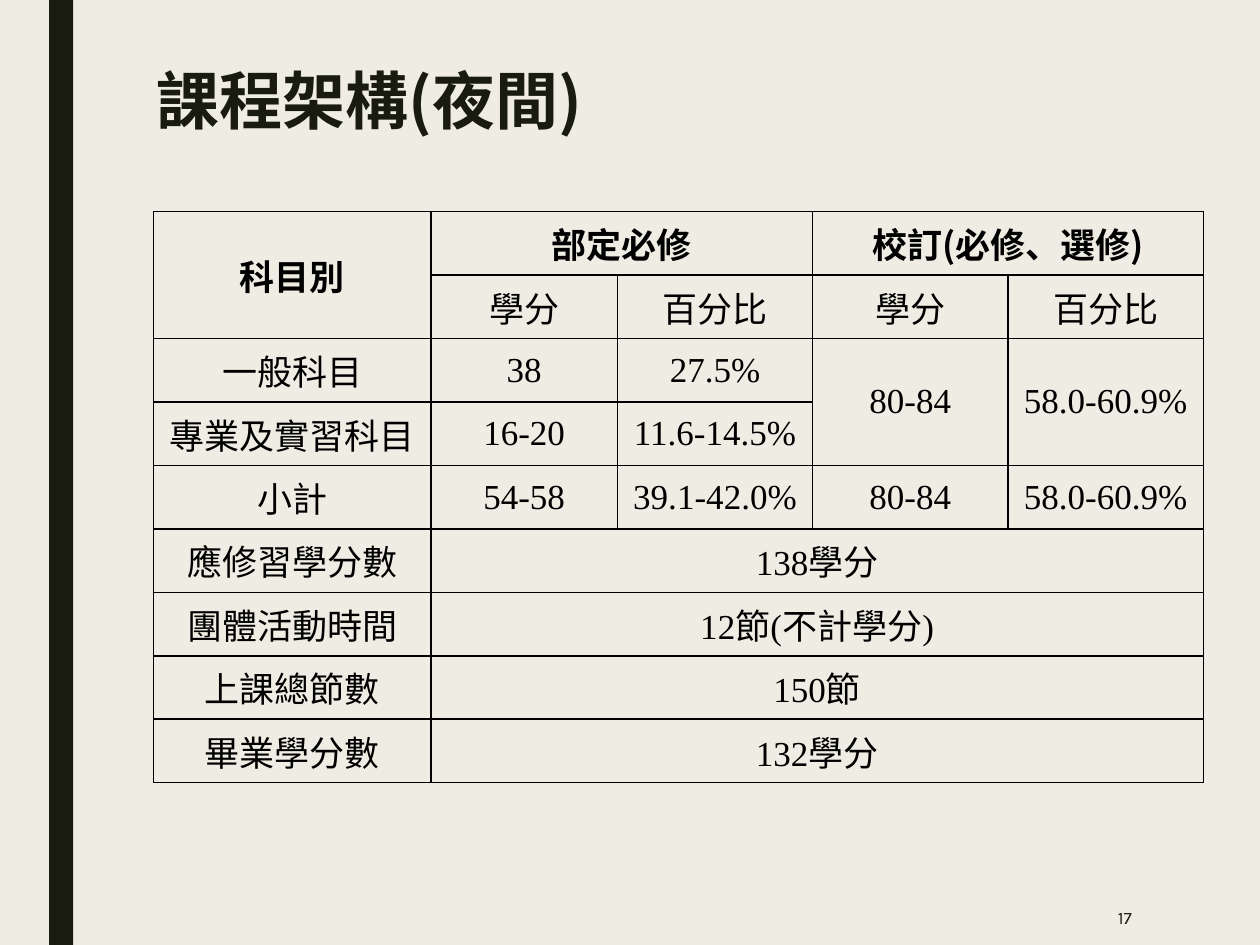
from lxml import etree
from pptx import Presentation
from pptx.dml.color import RGBColor
from pptx.enum.shapes import MSO_SHAPE
from pptx.enum.text import MSO_ANCHOR, PP_ALIGN
from pptx.oxml.ns import qn
from pptx.util import Inches, Pt

RECT = MSO_SHAPE.RECTANGLE
MIDDLE = MSO_ANCHOR.MIDDLE
LEFT, CENTER, RIGHT = PP_ALIGN.LEFT, PP_ALIGN.CENTER, PP_ALIGN.RIGHT

CJK, SERIF, SANS = "Noto Sans CJK SC", "Times New Roman", "Karla"
DARK, BLACK, PAPER = "191B0E", "000000", "EFEDE3"

TITLE = "課程架構(夜間)"
PAGE = "17"
ROWS = [
    ["科目別", "部定必修", None, "校訂(必修、選修)", None],
    [None, "學分", "百分比", "學分", "百分比"],
    ["一般科目", "38", "27.5%", "80-84", "58.0-60.9%"],
    ["專業及實習科目", "16-20", "11.6-14.5%", None, None],
    ["小計", "54-58", "39.1-42.0%", "80-84", "58.0-60.9%"],
    ["應修習學分數", "138學分", None, None, None],
    ["團體活動時間", "12節(不計學分)", None, None, None],
    ["上課總節數", "150節", None, None, None],
    ["畢業學分數", "132學分", None, None, None],
]
MERGES = [(0, 0, 1, 0), (0, 1, 0, 2), (0, 3, 0, 4), (2, 3, 3, 3), (2, 4, 3, 4)]
MERGES += [(row, 1, row, 4) for row in range(5, len(ROWS))]
COL_WIDTHS = [2.2, 1.48, 1.55, 1.55, 1.55]
ROW_HEIGHT = 0.46


def rgb(value):
    return RGBColor.from_string(value)


def box(*lengths):
    return [Inches(v) for v in lengths]


def write(tf, text, align, color, **font):
    tf.vertical_anchor = MIDDLE
    p = tf.paragraphs[0]
    p.alignment = align
    r = p.add_run()
    r.text = text
    for key, value in font.items():
        setattr(r.font, key, value)
    r.font.color.rgb = rgb(color)
    ea = etree.Element(qn("a:ea"), typeface=CJK)
    r.font._element.find(qn("a:latin")).addnext(ea)
    return p


def add_borders(cell):
    tc_pr = cell._tc.get_or_add_tcPr()
    for side in ("lnL", "lnR", "lnT", "lnB"):
        ln = etree.SubElement(tc_pr, qn(f"a:{side}"), w=str(Pt(1)))
        fill = etree.SubElement(ln, qn("a:solidFill"))
        etree.SubElement(fill, qn("a:srgbClr"), val=BLACK)


def add_course_table(s):
    frame = s.shapes.add_table(
        len(ROWS), len(COL_WIDTHS),
        *box(1.22, 1.68, sum(COL_WIDTHS), ROW_HEIGHT * len(ROWS)))
    table = frame.table
    table.first_row = table.horz_banding = False
    for column, width in zip(table.columns, COL_WIDTHS):
        column.width = Inches(width)
    for i, texts in enumerate(ROWS):
        table.rows[i].height = Inches(ROW_HEIGHT)
        for j, text in enumerate(texts):
            cell = table.cell(i, j)
            add_borders(cell)
            cell.fill.background()
            cell.vertical_anchor = MIDDLE
            if text:
                write(cell.text_frame, text, CENTER, BLACK, size=Pt(20),
                      name=SERIF if text[0].isdigit() else CJK, bold=i == 0)
                cell.vertical_anchor = MIDDLE
    for top, left, bottom, right in MERGES:
        table.cell(top, left).merge(table.cell(bottom, right))


def main():
    prs = Presentation()
    prs.slide_width, prs.slide_height = box(10, 7.5)
    s = prs.slides.add_slide(prs.slide_layouts[5])
    s.background.fill.solid()
    s.background.fill.fore_color.rgb = rgb(PAPER)

    bar = s.shapes.add_shape(RECT, *box(0.39, 0, 0.19, 7.5))
    bar.shadow.inherit = False
    bar.fill.solid()
    bar.fill.fore_color.rgb = rgb(DARK)
    bar.line.fill.background()

    title = s.shapes.title
    title.left, title.top, title.width, title.height = box(1.14, 0.52, 5.36, 0.62)
    p = write(title.text_frame, TITLE, LEFT, DARK, size=Pt(36), name=CJK, bold=True)
    p.line_spacing = 0.89

    add_course_table(s)

    number = s.shapes.add_textbox(*box(7.77, 7.06, 1.31, 0.44))
    number.text_frame.word_wrap = True
    write(number.text_frame, PAGE, RIGHT, DARK, size=Pt(10), name=SANS)

    prs.save("out.pptx")


if __name__ == "__main__":
    main()
